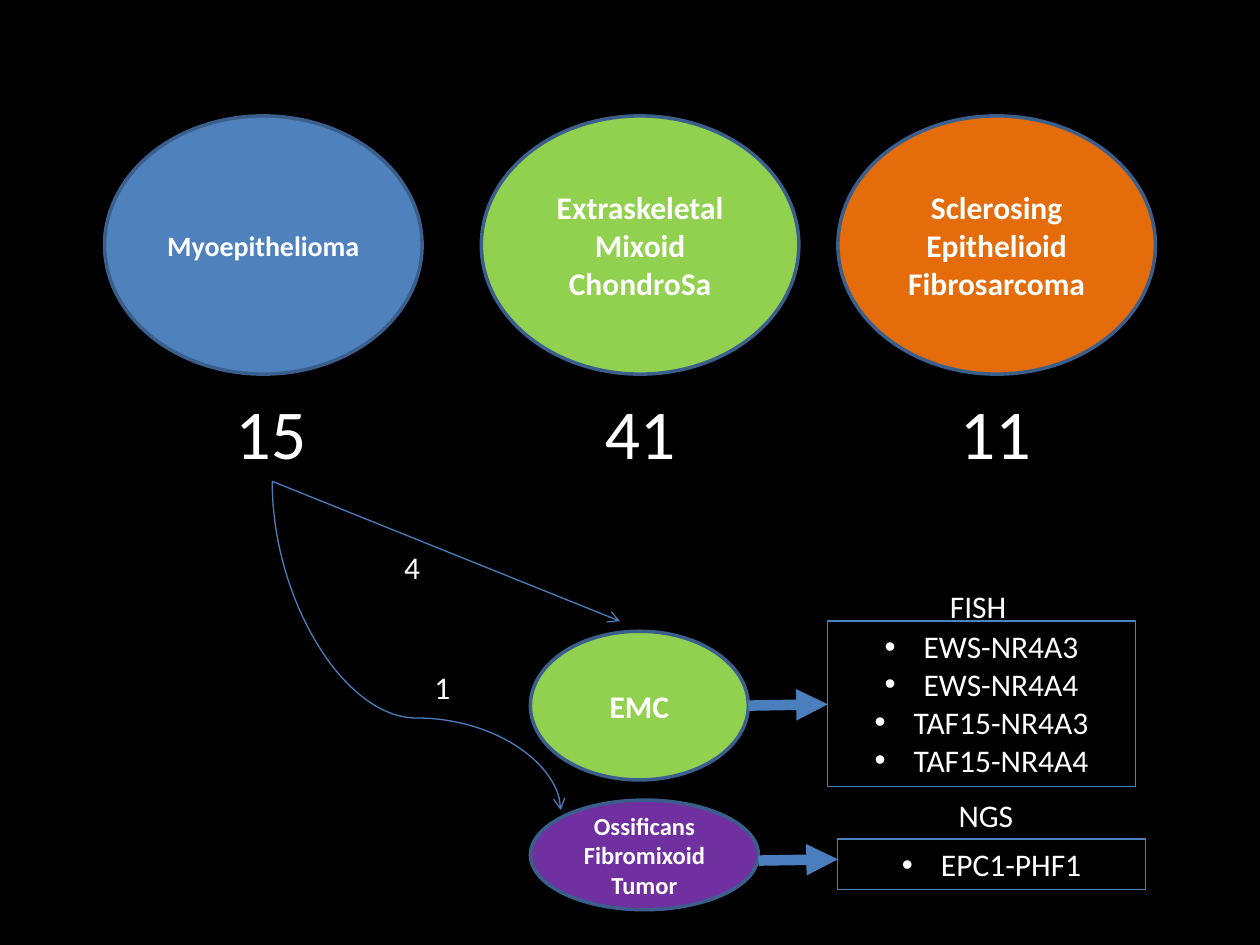
import pptx
import pptx.util
import pptx.dml.color
import pptx.enum.shapes
import pptx.enum.text
import pptx.oxml.ns
from lxml import etree

WHITE, BLACK, OUTLINE, ARROW, FRAME = "FFFFFF", "000000", "3A5F8C", "4B7EBC", "4F81BD"
GREEN = "92D050"
FONT = "Calibri"

DIAGNOSES = [
    ("Myoepithelioma", "4F81BD", 16, 8.3, "15", 17.7),
    ("Extraskeletal Mixoid ChondroSa", GREEN, 18, 38.2, "41", 47),
    ("Sclerosing Epithelioid Fibrosarcoma", "E46C0A", 18, 66.5, "11", 75.2),
]
RECLASSIFIED = [
    ("EMC", GREEN, 18, (42.1, 66.8, 17.3, 15.73)),
    ("Ossificans Fibromixoid Tumor", "7030A0", 14, (42.1, 84.67, 18.1, 11.6)),
]
FUSIONS = [
    (["EWS-NR4A3", "EWS-NR4A4", "TAF15-NR4A3", "TAF15-NR4A4"], (65.7, 65.73, 24.4, 17.47)),
    (["EPC1-PHF1"], (66.5, 88.8, 24.4, 5.33)),
]
LABELS = [
    ("4", (31.1, 57.33, 3.3, 5.33)),
    ("1", (33.5, 70, 3.7, 5.33)),
    ("FISH", (74.4, 61.47, 6.5, 5.33)),
    ("NGS", (75.1, 83.6, 6.4, 5.33)),
]
ORIGIN = (21.6, 50.93)
STRAIGHT_ARROWS = [
    (ORIGIN, (49.2, 65.73), 0.75, "arrow"),
    ((59.4, 74.67), (65.7, 74.53), 6, "triangle"),
    ((60.2, 91.07), (66.5, 90.93), 6, "triangle"),
]
CURVE_END = (44.5, 85.73)
CURVE_BEND = 0.72

OVAL_TOP, OVAL_WIDTH, OVAL_HEIGHT = 12.27, 25.2, 27.33
COUNT_TOP, COUNT_WIDTH, COUNT_HEIGHT = 40.53, 7.7, 10.27

deck = pptx.Presentation()
deck.slide_width = pptx.util.Inches(10)
deck.slide_height = pptx.util.Inches(7.5)
slide = deck.slides.add_slide(deck.slide_layouts[6])


def color(value):
    return pptx.dml.color.RGBColor.from_string(value)


def place(*shares):
    sides = (deck.slide_width, deck.slide_height)
    return [int(share * sides[i % 2] / 100) for i, share in enumerate(shares)]


def write(frame, lines, size, bold=False, align=None):
    for i, line in enumerate(lines):
        paragraph = frame.paragraphs[0] if i == 0 else frame.add_paragraph()
        paragraph.text = line
        paragraph.alignment = align
        paragraph.font.name = FONT
        paragraph.font.size = pptx.util.Pt(size)
        paragraph.font.bold = bold
        paragraph.font.color.rgb = color(WHITE)


def add_figure(kind, box, lines, size, line_color, line_width, fill=None, bold=False):
    figure = slide.shapes.add_shape(kind, *place(*box))
    figure.shadow.inherit = False
    if fill:
        figure.fill.solid()
        figure.fill.fore_color.rgb = color(fill)
    else:
        figure.fill.background()
    figure.line.color.rgb = color(line_color)
    figure.line.width = pptx.util.Pt(line_width)
    frame = figure.text_frame
    frame.word_wrap = True
    write(frame, lines, size, bold, pptx.enum.text.PP_ALIGN.CENTER)
    return frame


def add_oval(name, fill, size, box):
    frame = add_figure(pptx.enum.shapes.MSO_SHAPE.OVAL, box, [name], size, OUTLINE, 2, fill, True)
    frame.vertical_anchor = pptx.enum.text.MSO_ANCHOR.MIDDLE


def add_label(text, size, box):
    frame = slide.shapes.add_textbox(*place(*box)).text_frame
    frame.word_wrap = False
    frame.auto_size = pptx.enum.text.MSO_AUTO_SIZE.SHAPE_TO_FIT_TEXT
    write(frame, [text], size)


def add_fusion_list(fusions, box):
    frame = add_figure(pptx.enum.shapes.MSO_SHAPE.RECTANGLE, box, fusions, 18, FRAME, 0.75)
    frame.vertical_anchor = pptx.enum.text.MSO_ANCHOR.TOP
    frame.auto_size = pptx.enum.text.MSO_AUTO_SIZE.SHAPE_TO_FIT_TEXT
    indent = pptx.util.Inches(0.31)
    for paragraph in frame.paragraphs:
        properties = paragraph._p.get_or_add_pPr()
        properties.set("marL", str(indent))
        properties.set("indent", str(-indent))
        bullet_font = etree.Element(pptx.oxml.ns.qn("a:buFont"), typeface="Arial")
        bullet = etree.Element(pptx.oxml.ns.qn("a:buChar"), char="•")
        properties.insert_element_before(bullet_font, "a:tabLst", "a:defRPr", "a:extLst")
        properties.insert_element_before(bullet, "a:tabLst", "a:defRPr", "a:extLst")


def add_arrow(kind, ends, width, head):
    arrow = slide.shapes.add_connector(kind, *ends)
    arrow.line.color.rgb = color(ARROW)
    arrow.line.width = pptx.util.Pt(width)
    etree.SubElement(arrow.line._get_or_add_ln(), pptx.oxml.ns.qn("a:tailEnd"), type=head)
    etree.SubElement(arrow._element.spPr, pptx.oxml.ns.qn("a:effectLst"))
    return arrow


def add_curved_arrow(start, end, bend):
    left, top, right, bottom = place(*start, *end)
    middle_x, middle_y = (left + right) // 2, (top + bottom) // 2
    half_width, half_height = (bottom - top) // 2, (right - left) // 2
    ends = (middle_x + half_width, middle_y - half_height,
            middle_x - half_width, middle_y + half_height)
    curve = add_arrow(pptx.enum.shapes.MSO_CONNECTOR.CURVE, ends, 0.75, "arrow")
    properties = curve._element.spPr
    properties.find(pptx.oxml.ns.qn("a:xfrm")).set("rot", str(270 * 60000))
    adjustments = properties.find(".//" + pptx.oxml.ns.qn("a:avLst"))
    etree.SubElement(adjustments, pptx.oxml.ns.qn("a:gd"),
                     name="adj1", fmla=f"val {round(bend * 100000)}")


def main():
    slide.background.fill.solid()
    slide.background.fill.fore_color.rgb = color(BLACK)
    for name, fill, size, left, count, count_left in DIAGNOSES:
        add_oval(name, fill, size, (left, OVAL_TOP, OVAL_WIDTH, OVAL_HEIGHT))
        add_label(count, 40, (count_left, COUNT_TOP, COUNT_WIDTH, COUNT_HEIGHT))
    add_curved_arrow(ORIGIN, CURVE_END, CURVE_BEND)
    for diagnosis in RECLASSIFIED:
        add_oval(*diagnosis)
    for fusions, box in FUSIONS:
        add_fusion_list(fusions, box)
    for start, end, width, head in STRAIGHT_ARROWS:
        add_arrow(pptx.enum.shapes.MSO_CONNECTOR.STRAIGHT, place(*start, *end), width, head)
    for text, box in LABELS:
        add_label(text, 18, box)
    deck.save("out.pptx")


if __name__ == "__main__":
    main()
